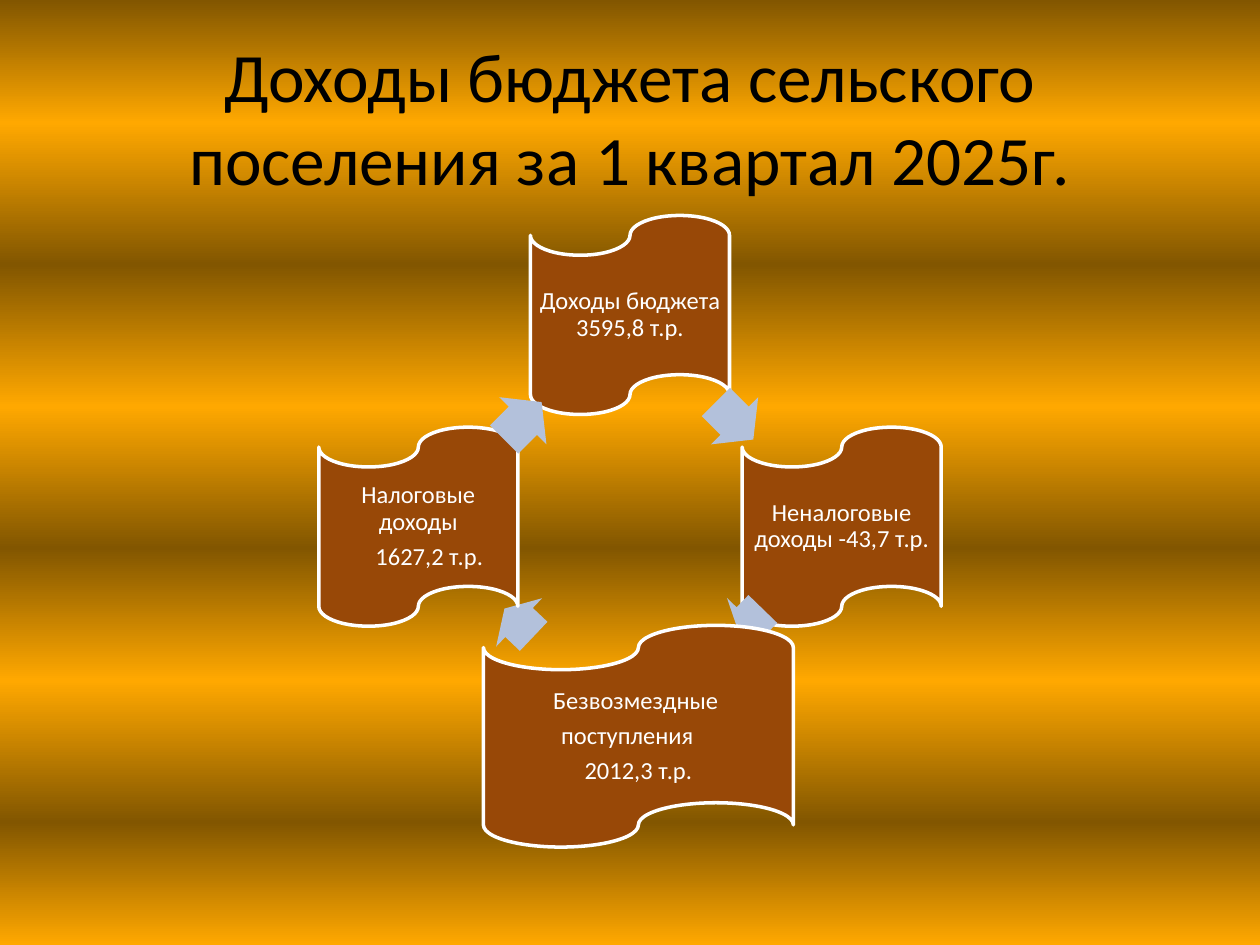
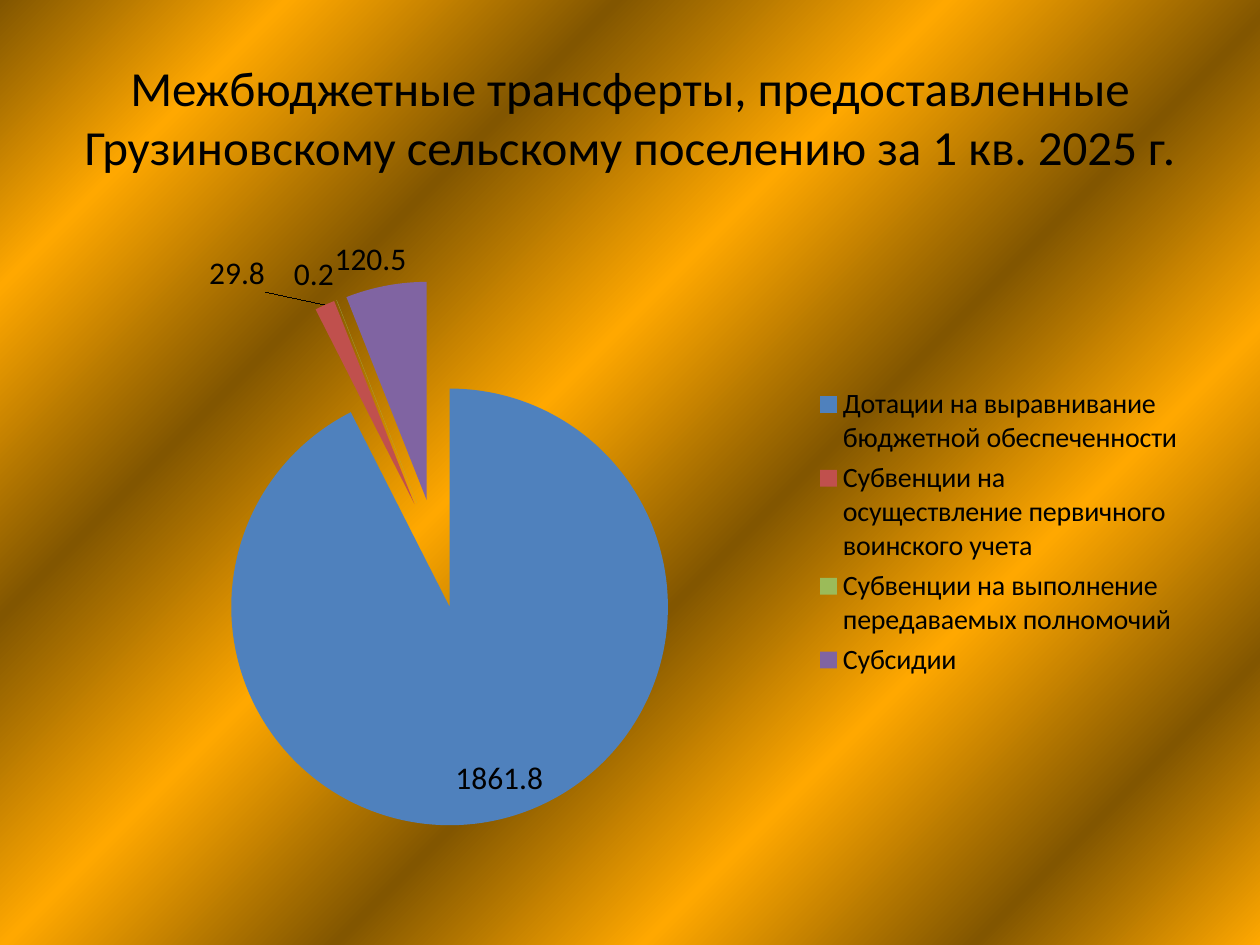
"""Build two slides on the budget of a rural settlement."""
from lxml import etree
from pptx import Presentation
from pptx.chart.data import CategoryChartData
from pptx.dml.color import RGBColor
from pptx.enum.chart import XL_CHART_TYPE, XL_LABEL_POSITION, XL_LEGEND_POSITION
from pptx.enum.shapes import MSO_SHAPE
from pptx.enum.text import MSO_ANCHOR, MSO_AUTO_SIZE, PP_ALIGN
from pptx.oxml import parse_xml
from pptx.oxml.ns import nsdecls, qn
from pptx.util import Inches, Pt

PIE = XL_CHART_TYPE.PIE
BEST = XL_LABEL_POSITION.BEST_FIT
RIGHT = XL_LEGEND_POSITION.RIGHT
TAPE = MSO_SHAPE.FLOWCHART_PUNCHED_TAPE
ARROW = MSO_SHAPE.RIGHT_ARROW
MIDDLE = MSO_ANCHOR.MIDDLE
CENTER = PP_ALIGN.CENTER
NO_FIT = MSO_AUTO_SIZE.NONE

BLACK = RGBColor(0x00, 0x00, 0x00)
WHITE = RGBColor(0xFF, 0xFF, 0xFF)
BROWN = RGBColor(0x98, 0x48, 0x07)
PALE = RGBColor(0xB3, 0xC1, 0xDB)
DARK = RGBColor(0x82, 0x56, 0x00)
GOLD = RGBColor(0xFF, 0xA8, 0x00)
SHADE = RGBColor(0x96, 0x40, 0x20)
BLUE = RGBColor(0x4F, 0x81, 0xBD)
RED = RGBColor(0xC0, 0x50, 0x4D)
GREEN = RGBColor(0x9B, 0xBB, 0x59)
PURPLE = RGBColor(0x80, 0x64, 0xA2)

FONT = "Calibri"
STOPS = (0, 13, 28, 43, 58, 72, 87, 100)
INCOME = "Доходы бюджета сельского поселения за 1 квартал 2025г."
GRANTS = ("Межбюджетные трансферты, предоставленные "
          "Грузиновскому сельскому поселению за 1 кв. 2025 г.")

MID = (5, 4.18)
REACH = 1.68
# Each line holds its text, left margin and right margin in points.
TAPES = [
    {"step": (0, -1), "size": (1.58, 1.58),
     "lines": [("Доходы бюджета 3595,8 т.р.", 0, 0)]},
    {"step": (1, 0), "size": (1.58, 1.58),
     "lines": [("Неналоговые доходы -43,7 т.р.", 0, 0)]},
    {"step": (0.04, 0.99), "size": (2.46, 1.76),
     "lines": [("Безвозмездные", 0, 3), ("поступления", 0, 12.6),
               ("2012,3 т.р.", 0, 0)]},
    {"step": (-1, 0), "size": (1.58, 1.58),
     "lines": [("Налоговые доходы", 0, 0), ("1627,2 т.р.", 12.6, 0)]},
]
ARROWS = [
    (5.83, 3.34, 0.42, 45),
    (5.96, 4.93, 0.27, 134.1),
    (4.12, 4.94, 0.32, 223.5),
    (4.15, 3.34, 0.42, 315),
]
SHARES = [
    ("Дотации на выравнивание бюджетной обеспеченности", 1861.8, BLUE),
    ("Субвенции на осуществление первичного воинского учета", 29.8, RED),
    ("Субвенции на выполнение передаваемых полномочий", 0.2, GREEN),
    ("Субсидии", 120.5, PURPLE),
]


def style(font, size, color):
    font.name, font.size = FONT, Pt(size)
    font.color.rgb = color


def paint(slide, angle):
    fill = slide.background.fill
    fill.gradient()
    fill.gradient_angle = 360 - angle
    stops = slide.element.find(".//" + qn("a:gsLst"))
    stops.clear()
    for i, pos in enumerate(STOPS):
        stop = etree.SubElement(stops, qn("a:gs"), pos=str(pos * 1000))
        tone = GOLD if i % 2 else DARK
        etree.SubElement(stop, qn("a:srgbClr"), val=str(tone))


def start(deck, text, size, angle):
    slide = deck.slides.add_slide(deck.slide_layouts[5])
    paint(slide, angle)
    title = slide.shapes.title
    title.left, title.top = Inches(0.5), Inches(0.3)
    title.width, title.height = Inches(9), Inches(1.25)
    frame = title.text_frame
    frame.text = text
    frame.auto_size, frame.vertical_anchor = NO_FIT, MIDDLE
    para = frame.paragraphs[0]
    para.alignment = CENTER
    style(para.runs[0].font, size, BLACK)
    return slide


def shade(run):
    fill = run._r.find(".//" + qn("a:solidFill"))
    fill.addnext(parse_xml(
        f'<a:effectLst {nsdecls("a")}><a:outerShdw blurRad="38100" '
        f'dist="76200" dir="5400000" algn="tl"><a:srgbClr val="{SHADE}"/>'
        '</a:outerShdw></a:effectLst>'))


def place(slide, kind, x, y, wide, high, color):
    shape = slide.shapes.add_shape(
        kind, Inches(x - wide / 2), Inches(y - high / 2),
        Inches(wide), Inches(high))
    shape.shadow.inherit = False
    shape.fill.solid()
    shape.fill.fore_color.rgb = color
    return shape


def add_tape(slide, step, size, lines):
    x, y = (m + REACH * s for m, s in zip(MID, step))
    tape = place(slide, TAPE, x, y, *size, BROWN)
    tape.line.color.rgb, tape.line.width = WHITE, Pt(2)
    frame = tape.text_frame
    frame.word_wrap, frame.vertical_anchor = True, MIDDLE
    frame.margin_left = frame.margin_right = Inches(0.02)
    frame.margin_top = frame.margin_bottom = Inches(0.02)
    frame.text = "\n".join(text for text, _, _ in lines)
    for para, (_, left, right) in zip(frame.paragraphs, lines):
        para.alignment, para.line_spacing = CENTER, 0.9
        para.space_after = Pt(4.9)
        style(para.font, 14, WHITE)
        props = para._p.get_or_add_pPr()
        props.set("marL", str(Pt(left)))
        props.set("marR", str(Pt(right)))


def add_arrow(slide, x, y, wide, turn):
    arrow = place(slide, ARROW, x, y, wide, 0.53, PALE)
    arrow.line.fill.background()
    arrow.adjustments[0], arrow.adjustments[1] = 0.6, 0.5
    arrow.rotation = turn


def add_pie(slide):
    data = CategoryChartData()
    data.categories = [name for name, _, _ in SHARES]
    data.add_series("Series 1", [value for _, value, _ in SHARES])
    chart = slide.shapes.add_chart(
        PIE, Inches(0.5), Inches(1.75), Inches(9), Inches(4.95), data).chart
    style(chart.font, 18, BLACK)
    chart.has_title = False
    chart.has_legend = True
    chart.legend.position = RIGHT
    chart.legend.include_in_layout = False
    style(chart.legend.font, 16, BLACK)
    plot = chart.plots[0]
    plot.vary_by_categories = True
    series = plot.series[0]
    for i, (_, _, color) in enumerate(SHARES):
        fill = series.points[i].format.fill
        fill.solid()
        fill.fore_color.rgb = color
    series._element.find(qn("c:tx")).addnext(
        parse_xml(f'<c:explosion {nsdecls("c")} val="25"/>'))
    labels = series.data_labels
    labels.show_value, labels.position = True, BEST
    series.points[1].data_label.position = BEST
    label = series._element.find(".//" + qn("c:dLbl"))
    label.find(qn("c:idx")).addnext(parse_xml(
        f'<c:layout {nsdecls("c")}><c:manualLayout><c:x val="-0.05"/>'
        '<c:y val="-0.01"/></c:manualLayout></c:layout>'))


def main():
    deck = Presentation()
    deck.slide_width, deck.slide_height = Inches(10), Inches(7.5)
    slide = start(deck, INCOME, 39.6, 90)
    shade(slide.shapes.title.text_frame.paragraphs[0].runs[0])
    for tape, arrow in zip(TAPES, ARROWS):
        add_tape(slide, **tape)
        add_arrow(slide, *arrow)
    add_pie(start(deck, GRANTS, 28, 45))
    deck.save("out.pptx")


if __name__ == "__main__":
    main()
